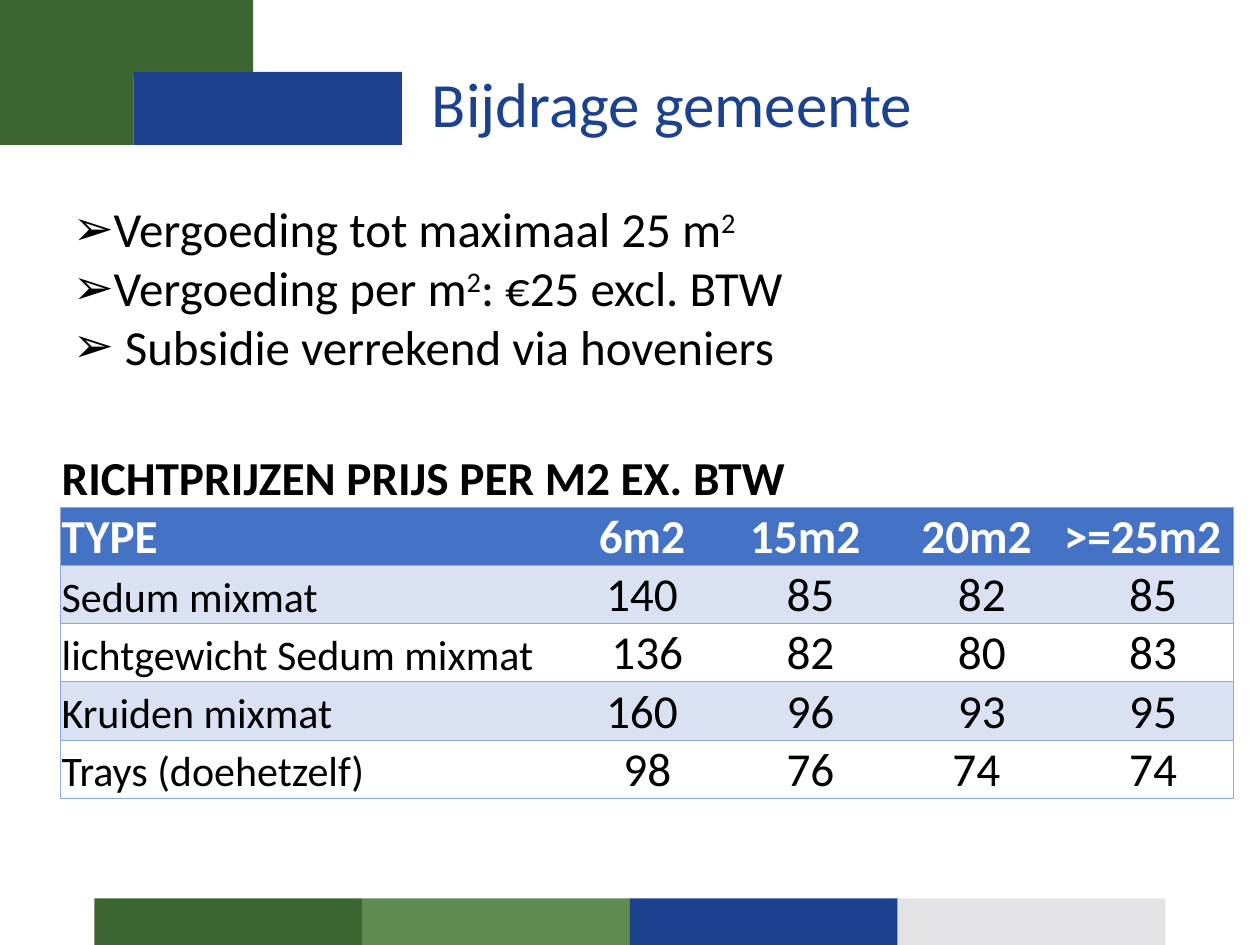
from lxml import etree
from pptx import Presentation
from pptx import util as u
from pptx.dml.color import RGBColor
from pptx.enum import shapes, text
from pptx.oxml import ns

GREEN = RGBColor(0x3C, 0x66, 0x31)
LIGHT_GREEN = RGBColor(0x61, 0x8A, 0x51)
BLUE = RGBColor(0x1C, 0x41, 0x8E)
GREY = RGBColor(0xE3, 0xE3, 0xE5)
HEADER_BLUE = RGBColor(0x44, 0x72, 0xC4)
BAND_BLUE = RGBColor(0xD9, 0xE1, 0xF2)
BORDER_BLUE = RGBColor(0x8E, 0xA9, 0xDB)
BLACK = RGBColor(0, 0, 0)
WHITE = RGBColor(0xFF, 0xFF, 0xFF)

CENTER, LEFT = text.PP_ALIGN.CENTER, text.PP_ALIGN.LEFT
MIDDLE, BOTTOM = text.MSO_ANCHOR.MIDDLE, text.MSO_ANCHOR.BOTTOM

BULLETS = [
    ["Vergoeding tot maximaal 25 m", "2"],
    ["Vergoeding per m", "2", ": €25 excl. BTW"],
    [" Subsidie verrekend via hoveniers"],
]
PRICES = [
    ["TYPE", "6m2", "15m2", "20m2", ">=25m2 "],
    ["Sedum mixmat", "140", " 85", " 82", " 85"],
    ["lichtgewicht Sedum mixmat", " 136", " 82", " 80", " 83"],
    ["Kruiden mixmat", "160", " 96", " 93", " 95"],
    ["Trays (doehetzelf)", " 98", " 76", "74", " 74"],
]


class Painter:
    def __init__(self, page, font="Calibri", bullet_font="DejaVu Sans"):
        self.page = page
        self.font = font
        self.bullet_font = bullet_font

    def style(self, para, size, color, bold=False):
        font = para.font
        font.name, font.size, font.bold = self.font, u.Pt(size), bold
        font.color.rgb = color

    def block(self, left, top, width, height, color):
        shape = self.page.shapes.add_shape(
            shapes.MSO_SHAPE.RECTANGLE, *map(u.Inches, (left, top, width, height)))
        shape.shadow.inherit = False
        shape.fill.solid()
        shape.fill.fore_color.rgb = color
        shape.line.fill.background()

    def frame(self, left, top, width, height):
        box = self.page.shapes.add_textbox(*map(u.Inches, (left, top, width, height)))
        box.text_frame.word_wrap = True
        return box.text_frame

    def title(self, words, *place):
        frame = self.frame(*place)
        frame.vertical_anchor = MIDDLE
        frame.text = words
        self.style(frame.paragraphs[0], 36, BLUE)

    def bullets(self, items, *place):
        """Every second part of an item is set as superscript."""
        frame = self.frame(*place)
        indent = u.Inches(0.31)
        for index, parts in enumerate(items):
            para = frame.add_paragraph() if index else frame.paragraphs[0]
            props = para._p.get_or_add_pPr()
            props.set("marL", str(indent))
            props.set("indent", str(-indent))
            etree.SubElement(props, ns.qn("a:buFont"), typeface=self.bullet_font)
            etree.SubElement(props, ns.qn("a:buChar"), char="➢")
            self.style(para, 28, BLACK)
            for number, part in enumerate(parts):
                span = para.add_run()
                span.text = part
                if number % 2:
                    span._r.get_or_add_rPr().set("baseline", "30000")

    def borders(self, cell, sides):
        """Draw the named sides (from L, R, T, B) and clear the others."""
        props = cell._tc.get_or_add_tcPr()
        for side in "LRTB":
            line = etree.SubElement(props, ns.qn("a:ln" + side), w=str(u.Pt(0.5)))
            if side in sides:
                fill = etree.SubElement(line, ns.qn("a:solidFill"))
                etree.SubElement(fill, ns.qn("a:srgbClr"), val=str(BORDER_BLUE))
            else:
                etree.SubElement(line, ns.qn("a:noFill"))

    def cell(self, cell, words, size, color, bold=False, align=LEFT,
             anchor=BOTTOM, sides="", fill=None):
        cell.margin_left = cell.margin_right = cell.margin_top = u.Inches(0.01)
        cell.margin_bottom = 0
        cell.vertical_anchor = anchor
        cell.text = words
        para = cell.text_frame.paragraphs[0]
        para.alignment = align
        self.style(para, size, color, bold)
        self.borders(cell, sides)
        if fill is None:
            cell.fill.background()
        else:
            cell.fill.solid()
            cell.fill.fore_color.rgb = fill

    def price_table(self, heading, rows, left, top, widths, heights):
        place = map(u.Inches, (left, top, sum(widths), sum(heights)))
        table = self.page.shapes.add_table(len(heights), len(widths), *place).table
        table.first_row = table.horz_banding = False
        for column, width in zip(table.columns, widths):
            column.width = u.Inches(width)
        for row, height in zip(table.rows, heights):
            row.height = u.Inches(height)

        last = len(widths) - 1
        for col in range(last + 1):
            self.cell(table.cell(0, col), "" if col else heading, 27, BLACK,
                      bold=True, sides="B")
        table.cell(0, 0).merge(table.cell(0, last))

        for number, row in enumerate(rows, 1):
            header = number == 1
            fill = HEADER_BLUE if header else None if number % 2 else BAND_BLUE
            for col, words in enumerate(row):
                self.cell(
                    table.cell(number, col), words,
                    size=27 if header or col else 24,
                    color=WHITE if header else BLACK,
                    bold=header,
                    align=CENTER if col else LEFT,
                    anchor=MIDDLE if header and col else BOTTOM,
                    sides="TB" + {0: "L", last: "R"}.get(col, ""),
                    fill=fill)


def main():
    deck = Presentation()
    deck.slide_width, deck.slide_height = u.Inches(10), u.Inches(7.5)
    painter = Painter(deck.slides.add_slide(deck.slide_layouts[6]))

    painter.block(0, 0, 2.01, 0.6, GREEN)
    painter.block(0, 0, 1.06, 1.15, GREEN)
    painter.block(1.06, 0.57, 2.13, 0.58, BLUE)
    for index, color in enumerate((GREEN, LIGHT_GREEN, BLUE, GREY)):
        painter.block(0.75 + index * 2.125, 7.13, 2.125, 0.4, color)

    painter.title("Bijdrage gemeente", 3.33, 0.47, 6.67, 0.69)
    painter.bullets(BULLETS, 0.48, 1.53, 8.7, 1.99)
    painter.price_table("RICHTPRIJZEN PRIJS PER M2 EX. BTW", PRICES, 0.48, 3.52,
                        widths=[4, 1.23] + [1.36] * 3,
                        heights=[0.51] + [0.46] * len(PRICES))
    deck.save("out.pptx")


if __name__ == "__main__":
    main()
